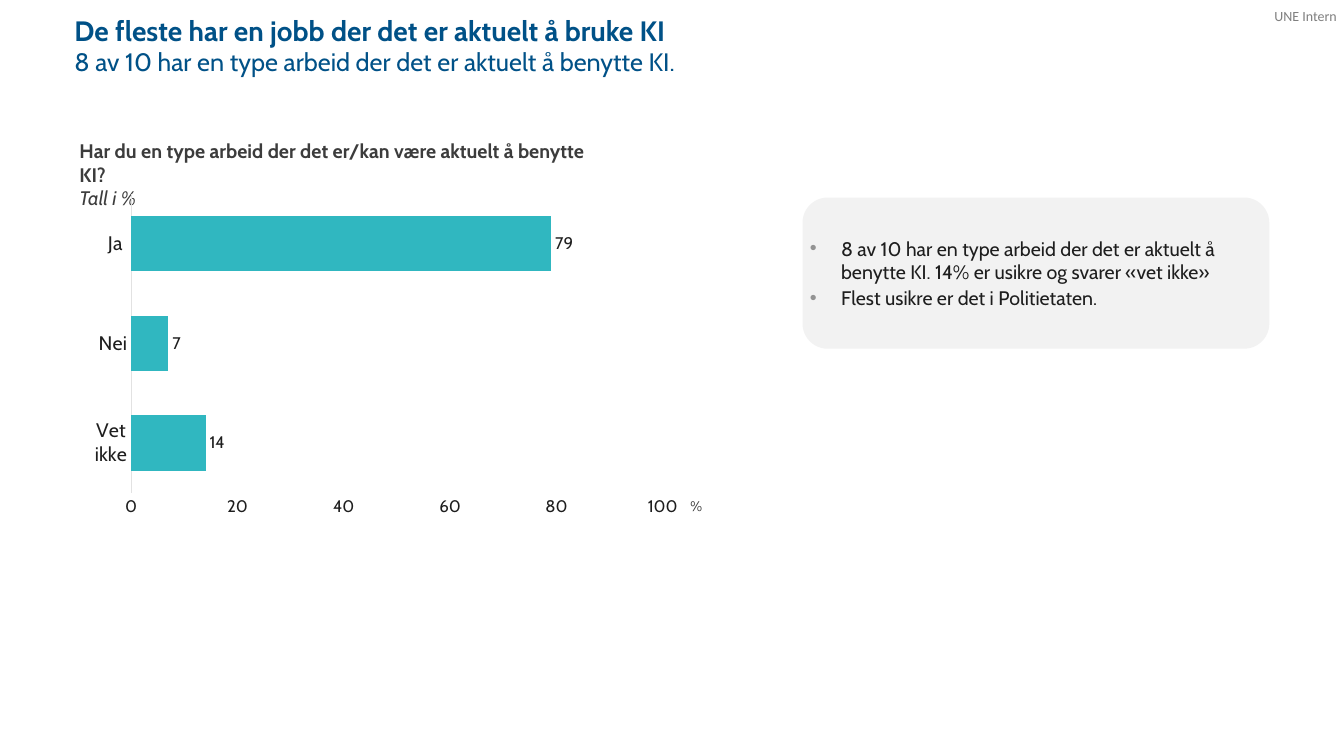
"""Builds the slide on how many have a job where AI is relevant."""
from lxml import etree
from pptx import Presentation
from pptx import util as u
from pptx.chart import data
from pptx.dml.color import RGBColor
from pptx.enum import chart as charts, shapes, text
from pptx.oxml import parse_xml
from pptx.oxml.ns import nsdecls, qn


def color(code):
    return RGBColor.from_string(code)


class SlideBuilder:
    FONT = "Cabin"
    DARK, GRAY, BLUE, TEAL = "1E1E1E", "3C3C3C", "005187", "30B7C0"
    PANEL, BULLET, AXIS = "F2F2F2", "939393", "E2E2E2"

    def __init__(self, deck):
        self.page = deck.slides.add_slide(deck.slide_layouts[6])

    def style(self, font, size, code, bold=False, italic=False, name=FONT):
        font.name, font.size, font.bold, font.italic = name, u.Pt(size), bold, italic
        font.color.rgb = color(code)

    def text(self, place, lines, code, wrap=True, inset=None, name=FONT):
        box = self.page.shapes.add_textbox(*map(u.Inches, place))
        frame = box.text_frame
        frame.word_wrap = wrap
        if inset is not None:
            self.set_insets(frame, inset)
        frame.text = "\n".join(line for line, *_ in lines)
        for para, (_, size, bold, italic) in zip(frame.paragraphs, lines):
            self.style(para.runs[0].font, size, code, bold, italic, name)

    def set_insets(self, frame, inset):
        frame.margin_left = frame.margin_right = u.Inches(inset)
        frame.margin_top = frame.margin_bottom = u.Inches(inset)

    def panel(self, place, points):
        box = self.page.shapes.add_shape(
            shapes.MSO_SHAPE.ROUNDED_RECTANGLE, *map(u.Inches, place))
        box.shadow.inherit = False
        box.fill.solid()
        box.fill.fore_color.rgb = color(self.PANEL)
        box.line.fill.background()
        frame = box.text_frame
        frame.word_wrap = True
        frame.vertical_anchor = text.MSO_ANCHOR.MIDDLE
        self.set_insets(frame, 0)
        frame.text = "\n".join(points)
        for number, para in enumerate(frame.paragraphs):
            para.alignment = text.PP_ALIGN.LEFT
            if number:
                para.space_before = u.Pt(2)
            self.add_bullet(para)
            self.style(para.runs[0].font, 14, self.DARK)

    def add_bullet(self, para):
        props = para._p.get_or_add_pPr()
        props.set("marL", str(u.Inches(0.31)))
        props.set("indent", str(-u.Inches(0.31)))
        tint = etree.SubElement(props, qn("a:buClr"))
        etree.SubElement(tint, qn("a:srgbClr"), val=self.BULLET)
        etree.SubElement(props, qn("a:buFont"), typeface="Arial")
        etree.SubElement(props, qn("a:buChar"), char="•")

    def bar_chart(self, place, answers, plot_area):
        content = data.CategoryChartData()
        content.categories = list(answers)
        content.add_series("Series 1", answers.values())
        chart = self.page.shapes.add_chart(
            charts.XL_CHART_TYPE.BAR_CLUSTERED, *map(u.Inches, place), content).chart
        chart.has_legend = chart.has_title = False
        self.style(chart.font, 10, self.DARK)
        for axis, size in ((chart.category_axis, 14), (chart.value_axis, 12)):
            axis.has_major_gridlines = False
            axis.major_tick_mark = axis.minor_tick_mark = charts.XL_TICK_MARK.NONE
            self.style(axis.tick_labels.font, size, self.DARK)
        line = chart.category_axis.format.line
        line.color.rgb, line.width = color(self.AXIS), u.Pt(0.75)
        scale = chart.value_axis
        scale.format.line.fill.background()
        scale.minimum_scale, scale.maximum_scale, scale.major_unit = 0, 100, 20
        plot = chart.plots[0]
        plot.gap_width, plot.vary_by_categories = 80, False
        bars = plot.series[0].format.fill
        bars.solid()
        bars.fore_color.rgb = color(self.TEAL)
        plot.has_data_labels = True
        labels = plot.data_labels
        labels.show_value = True
        labels.position = charts.XL_LABEL_POSITION.OUTSIDE_END
        self.style(labels.font, 12, self.DARK)
        self.set_plot_area(chart, plot_area)

    def set_plot_area(self, chart, plot_area):
        area = chart.element.find(".//" + qn("c:plotArea"))
        for former in area.findall(qn("c:layout")):
            area.remove(former)
        modes = '<c:xMode val="edge"/><c:yMode val="edge"/>'
        sizes = "".join(f'<c:{key} val="{value}"/>' for key, value in zip("xywh", plot_area))
        area.insert(0, parse_xml(
            f'<c:layout {nsdecls("c")}><c:manualLayout><c:layoutTarget val="inner"/>'
            f"{modes}{sizes}</c:manualLayout></c:layout>"))


def main():
    deck = Presentation()
    deck.slide_width, deck.slide_height = u.Inches(13.33), u.Inches(7.5)
    slide = SlideBuilder(deck)
    slide.text((12.64, 0.07, 0.65, 0.17), [("UNE Intern", 10, False, False)],
               "7F7F7F", wrap=False, inset=0, name="Calibri")
    slide.text((0.69, 1.33, 5.47, 0.57), [
        ("Har du en type arbeid der det er/kan være aktuelt å benytte KI?", 14, True, False),
        ("Tall i %", 14, False, True)], slide.GRAY)
    slide.bar_chart((0.89, 1.89, 5.86, 3.26), {"Vet ikke": 14, "Nei": 7, "Ja ": 79},
                    (0.07, 0.01, 0.9, 0.91))
    slide.text((0.64, 0.08, 11.95, 0.68), [
        ("De fleste har en jobb der det er aktuelt å bruke KI", 20, True, False),
        ("8 av 10 har en type arbeid der det er aktuelt å benytte KI.", 18, False, False)],
        slide.BLUE)
    slide.text((6.75, 4.89, 0.3, 0.27), [("%", 10, False, False)], slide.GRAY, wrap=False)
    slide.panel((7.96, 1.96, 4.63, 1.5), [
        "8 av 10 har en type arbeid der det er aktuelt å benytte KI. "
        "14% er usikre og svarer «vet ikke»",
        "Flest usikre er det i Politietaten."])
    deck.save("out.pptx")


if __name__ == "__main__":
    main()
